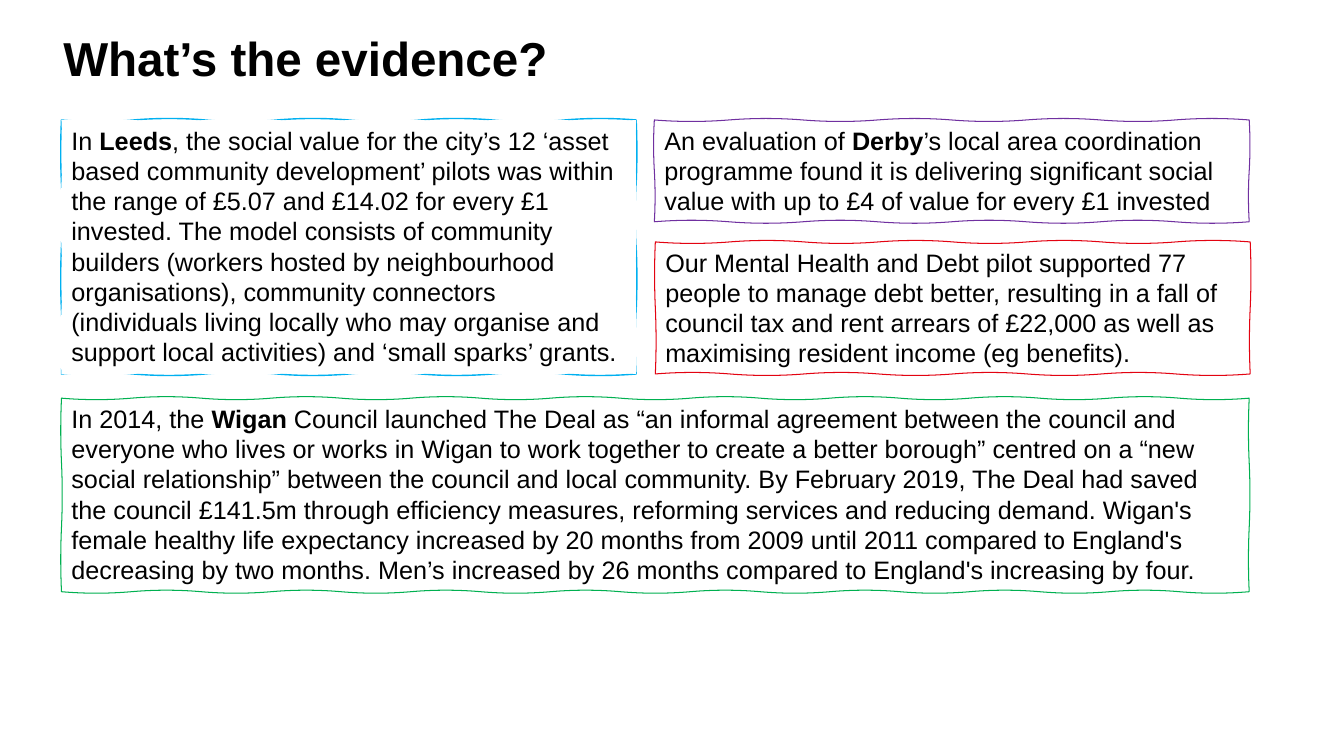
"""Build the "What's the evidence?" slide with four hand-drawn text panels."""
from lxml import etree
from pptx import Presentation
from pptx import util as u
from pptx.dml.color import RGBColor
from pptx.enum import text
from pptx.oxml.ns import qn

COLORS = {"black": "000000", "white": "FFFFFF", "blue": "00B0F0",
          "purple": "7030A0", "green": "00B050", "red": "E30311"}


def write(tf, runs, size=18, after=None):
    tf.word_wrap = True
    tf.auto_size = text.MSO_AUTO_SIZE.SHAPE_TO_FIT_TEXT
    tf.vertical_anchor = text.MSO_ANCHOR.TOP
    tf.margin_left = tf.margin_right = u.Inches(0.1)
    tf.margin_top = tf.margin_bottom = u.Inches(0.05)
    p = tf.paragraphs[0]
    p.alignment = text.PP_ALIGN.LEFT
    if after is not None:
        p.space_after = u.Pt(after)
    for words, bold in runs:
        r = p.add_run()
        r.text = words
        r.font.name = "Arial"
        r.font.size = u.Pt(size)
        r.font.bold = bold
        r.font.color.rgb = RGBColor.from_string(COLORS["black"])


def wavy_box(shapes, box, waves, bulge_y, bulge_x):
    left, top, width, height = (u.Inches(v) for v in box)
    across, down = waves
    knots = [(left + width * i // across, top) for i in range(across)]
    knots += [(left + width, top + height * i // down) for i in range(down)]
    knots += [(left + width * i // across, top + height) for i in range(across, 0, -1)]
    knots += [(left, top + height * i // down) for i in range(down, -1, -1)]
    builder = shapes.build_freeform(*knots[0])
    builder.add_line_segments(knots[1:], close=True)
    sp = builder.convert_to_shape()
    x1 = y1 = 0
    for i, step in enumerate(sp.element.xpath(".//a:lnTo")):
        x2, y2 = int(step[0].get("x")), int(step[0].get("y"))
        sign = -1 if i % 2 else 1
        dx = sign * u.Inches(bulge_x) if x1 == x2 else 0
        dy = sign * u.Inches(bulge_y) if y1 == y2 else 0
        step.tag = qn("a:cubicBezTo")
        for k in (2, 1):
            pt = etree.Element(qn("a:pt"))
            pt.set("x", str(x1 + (x2 - x1) * k // 3 + dx))
            pt.set("y", str(y1 + (y2 - y1) * k // 3 + dy))
            step.insert(0, pt)
        x1, y1 = x2, y2
    return sp


prs = Presentation()
prs.slide_width, prs.slide_height = u.Inches(13.33), u.Inches(7.5)
s = prs.slides.add_slide(prs.slide_layouts[6])

title = s.shapes.add_textbox(u.Inches(0.53), u.Inches(0.24), u.Inches(12.63), u.Inches(0.67))
write(title.text_frame, [("What’s the evidence?", True)], size=34)

panels = [
    ((0.61, 1.19, 5.7, 2.52), (8, 4), "blue", 1, 12, [
        ("In ", False), ("Leeds", True),
        (", the social value for the city’s 12 ‘asset based community development’ pilots "
         "was within the range of £5.07 and £14.02 for every £1 invested. The model consists "
         "of community builders (workers hosted by neighbourhood organisations), community "
         "connectors (individuals living locally who may organise and support local "
         "activities) and ‘small sparks’ grants.", False)]),
    ((6.49, 1.19, 5.9, 1.01), (8, 2), "purple", 0.75, None, [
        ("An evaluation of ", False), ("Derby", True),
        ("’s local area coordination programme found it is delivering significant social "
         "value with up to £4 of value for every £1 invested", False)]),
    ((0.61, 3.95, 11.78, 1.92), (17, 3), "green", 0.75, None, [
        ("In 2014, the ", False), ("Wigan", True),
        (" Council launched The Deal as “an informal agreement between the council and "
         "everyone who lives or works in Wigan to work together to create a better borough” "
         "centred on a “new social relationship” between the council and local community. "
         "By February 2019, The Deal had saved the council £141.5m through efficiency "
         "measures, reforming services and reducing demand. Wigan's female healthy life "
         "expectancy increased by 20 months from 2009 until 2011 compared to England's "
         "decreasing by two months. Men’s increased by 26 months compared to England's "
         "increasing by four.", False)]),
    ((6.5, 2.4, 5.9, 1.31), (8, 2), "red", 0.75, None, [
        ("Our Mental Health and Debt pilot supported 77 people to manage debt better, "
         "resulting in a fall of council tax and rent arrears of £22,000 as well as "
         "maximising resident income (eg benefits).", False)]),
]

for box, waves, color, weight, after, runs in panels:
    sp = wavy_box(s.shapes, box, waves, 0.02, 0.01)
    sp.shadow.inherit = False
    sp.line.color.rgb = RGBColor.from_string(COLORS[color])
    sp.line.width = u.Pt(weight)
    if color == "blue":
        sp.fill.solid()
        sp.fill.fore_color.rgb = RGBColor.from_string(COLORS["white"])
        inner = wavy_box(s.shapes, box, waves, -0.02, -0.01)
        outline = sp.element.xpath(".//a:path")[0]
        filling = inner.element.xpath(".//a:path")[0]
        outline.set("fill", "none")
        filling.set("stroke", "0")
        outline.addnext(filling)
        s.shapes.element.remove(inner.element)
    else:
        sp.fill.background()
    write(sp.text_frame, runs, after=after)

prs.save("out.pptx")
